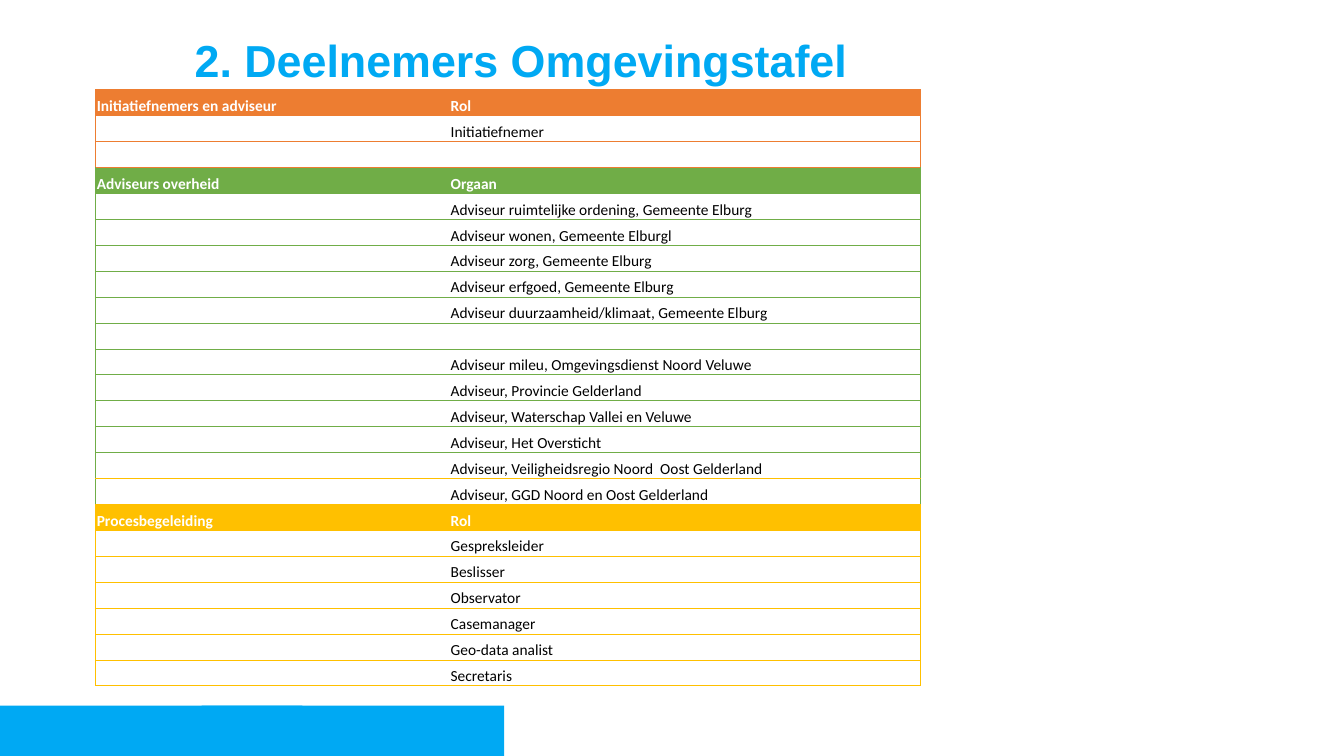
from math import cos, pi, sin

from lxml.etree import SubElement
from pptx import Presentation
from pptx.dml.color import RGBColor
from pptx.enum.text import MSO_ANCHOR, PP_ALIGN
from pptx.oxml.ns import qn
from pptx.util import Inches, Pt

BLUE = RGBColor(0x00, 0xA9, 0xF3)
ORANGE = RGBColor(0xED, 0x7D, 0x31)
GREEN = RGBColor(0x70, 0xAD, 0x47)
YELLOW = RGBColor(0xFF, 0xC0, 0x00)
WHITE = RGBColor(0xFF, 0xFF, 0xFF)
BLACK = RGBColor(0x00, 0x00, 0x00)

# Content: colour, two headings, roles (an empty string is an open row)
TITLE = "2. Deelnemers Omgevingstafel"
SECTIONS = [
    (ORANGE, "Initiatiefnemers en adviseur", "Rol", ["Initiatiefnemer", ""]),
    (GREEN, "Adviseurs overheid", "Orgaan", [
        "Adviseur ruimtelijke ordening, Gemeente Elburg",
        "Adviseur wonen, Gemeente Elburgl",
        "Adviseur zorg, Gemeente Elburg",
        "Adviseur erfgoed, Gemeente Elburg",
        "Adviseur duurzaamheid/klimaat, Gemeente Elburg",
        "",
        "Adviseur mileu, Omgevingsdienst Noord Veluwe",
        "Adviseur, Provincie Gelderland",
        "Adviseur, Waterschap Vallei en Veluwe",
        "Adviseur, Het Oversticht",
        "Adviseur, Veiligheidsregio Noord  Oost Gelderland",
        "Adviseur, GGD Noord en Oost Gelderland",
    ]),
    (YELLOW, "Procesbegeleiding", "Rol", [
        "Gespreksleider", "Beslisser", "Observator",
        "Casemanager", "Geo-data analist", "Secretaris",
    ]),
]
YELLOW_RULED = SECTIONS[1][3][-2:]

TABLE_LEFT, TABLE_TOP = 0.95, 0.89
COLUMN_WIDTHS = [3.51, 4.67]
TABLE_HEIGHT = 5.92
NO_STYLE = "{2D5ABB26-0587-4C30-8999-92F81FD0307C}"

BAND_LEFTS = [-0.01, 2.46]
BAND_TOP, BAND_WIDTH, BAND_HEIGHT = 7.02, 2.95, 0.49
ARC_STEPS = 40


def add_band(slide, left):
    """Bar whose top right corner is a quarter circle of the full height."""
    bottom, center = BAND_TOP + BAND_HEIGHT, left + BAND_WIDTH - BAND_HEIGHT
    angles = [pi / 2 * (1 - step / ARC_STEPS) for step in range(ARC_STEPS + 1)]
    arc = [(center + BAND_HEIGHT * cos(angle), bottom - BAND_HEIGHT * sin(angle))
           for angle in angles]
    builder = slide.shapes.build_freeform(left, bottom, scale=Inches(1))
    builder.add_line_segments([(left, BAND_TOP)] + arc, close=True)
    band = builder.convert_to_shape()
    band.shadow.inherit = False
    band.fill.solid()
    band.fill.fore_color.rgb = BLUE
    band.line.fill.background()


def set_borders(cell, colors):
    properties = cell._tc.get_or_add_tcPr()
    for position, side in enumerate(("lnL", "lnR", "lnT", "lnB")):
        line = properties.makeelement(qn("a:" + side), {"w": str(Pt(0.5))})
        properties.insert(position, line)
        if side in colors:
            fill = SubElement(line, qn("a:solidFill"))
            SubElement(fill, qn("a:srgbClr"), val=str(colors[side]))
        else:
            SubElement(line, qn("a:noFill"))


def format_cell(cell, text, is_heading, color):
    cell.margin_left = cell.margin_right = cell.margin_top = Inches(0.01)
    cell.margin_bottom = 0
    cell.vertical_anchor = MSO_ANCHOR.BOTTOM
    if is_heading:
        cell.fill.solid()
        cell.fill.fore_color.rgb = color
    else:
        cell.fill.background()
    paragraph = cell.text_frame.paragraphs[0]
    if not text:
        SubElement(paragraph._p, qn("a:endParaRPr"), sz="1100")
        return
    paragraph.text = text
    font = paragraph.runs[0].font
    font.name, font.size, font.bold = "Calibri", Pt(11), is_heading
    font.color.rgb = WHITE if is_heading else BLACK


def add_participants(slide):
    rows = []
    for color, group, heading, roles in SECTIONS:
        rows.append((color, group, heading, True))
        rows += [(color, "", role, False) for role in roles]
    frame = slide.shapes.add_table(
        len(rows), len(COLUMN_WIDTHS), Inches(TABLE_LEFT), Inches(TABLE_TOP),
        Inches(sum(COLUMN_WIDTHS)), Inches(TABLE_HEIGHT))
    table = frame.table
    table.first_row = table.horz_banding = False
    table._tbl.tblPr.find(qn("a:tableStyleId")).text = NO_STYLE
    for column, width in zip(table.columns, COLUMN_WIDTHS):
        column.width = Inches(width)

    top = ORANGE
    for index, (color, group, role, is_heading) in enumerate(rows):
        table.rows[index].height = Inches(TABLE_HEIGHT / len(rows))
        bottom = YELLOW if role in YELLOW_RULED else color
        for column, (text, side) in enumerate([(group, "lnL"), (role, "lnR")]):
            cell = table.cell(index, column)
            format_cell(cell, text, is_heading, color)
            set_borders(cell, {side: color, "lnT": top, "lnB": bottom})
        top = bottom


def main():
    presentation = Presentation()
    presentation.slide_width = Inches(13.33)
    presentation.slide_height = Inches(7.5)
    slide = presentation.slides.add_slide(presentation.slide_layouts[5])

    # Blue footer
    for left in BAND_LEFTS:
        add_band(slide, left)

    # Title
    title = slide.shapes.title
    title.left, title.top = Inches(1.93), Inches(0.38)
    title.width, title.height = Inches(10.97), Inches(0.79)
    frame = title.text_frame
    frame.text = TITLE
    frame.margin_left = frame.margin_right = 0
    frame.margin_top = frame.margin_bottom = 0
    frame.vertical_anchor = MSO_ANCHOR.TOP
    paragraph = frame.paragraphs[0]
    paragraph.alignment = PP_ALIGN.LEFT
    paragraph.line_spacing = 0.9
    font = paragraph.runs[0].font
    font.name, font.size, font.bold = "Arial", Pt(32), True
    font.color.rgb = BLUE

    # Participants table
    add_participants(slide)
    presentation.save("out.pptx")


if __name__ == "__main__":
    main()
